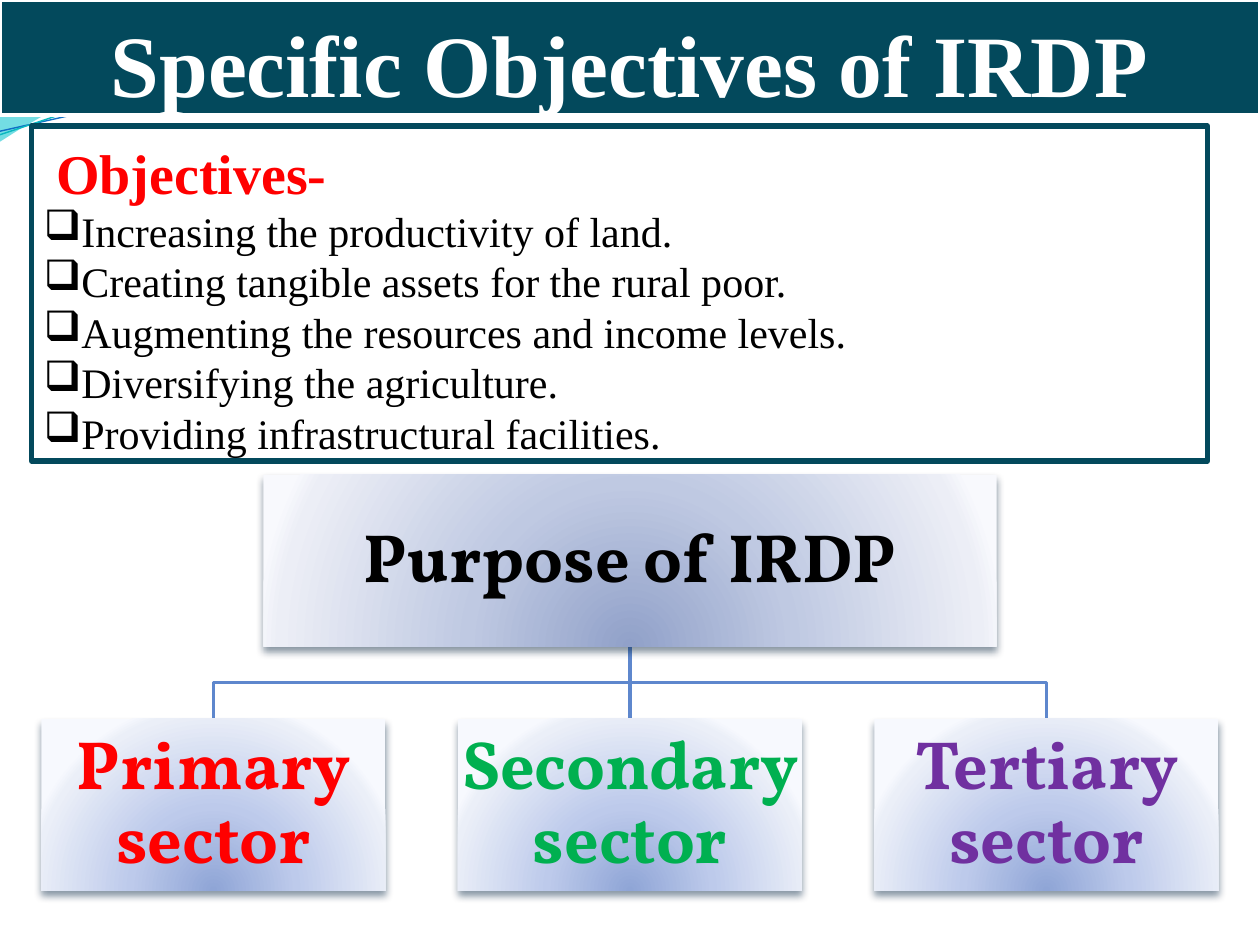
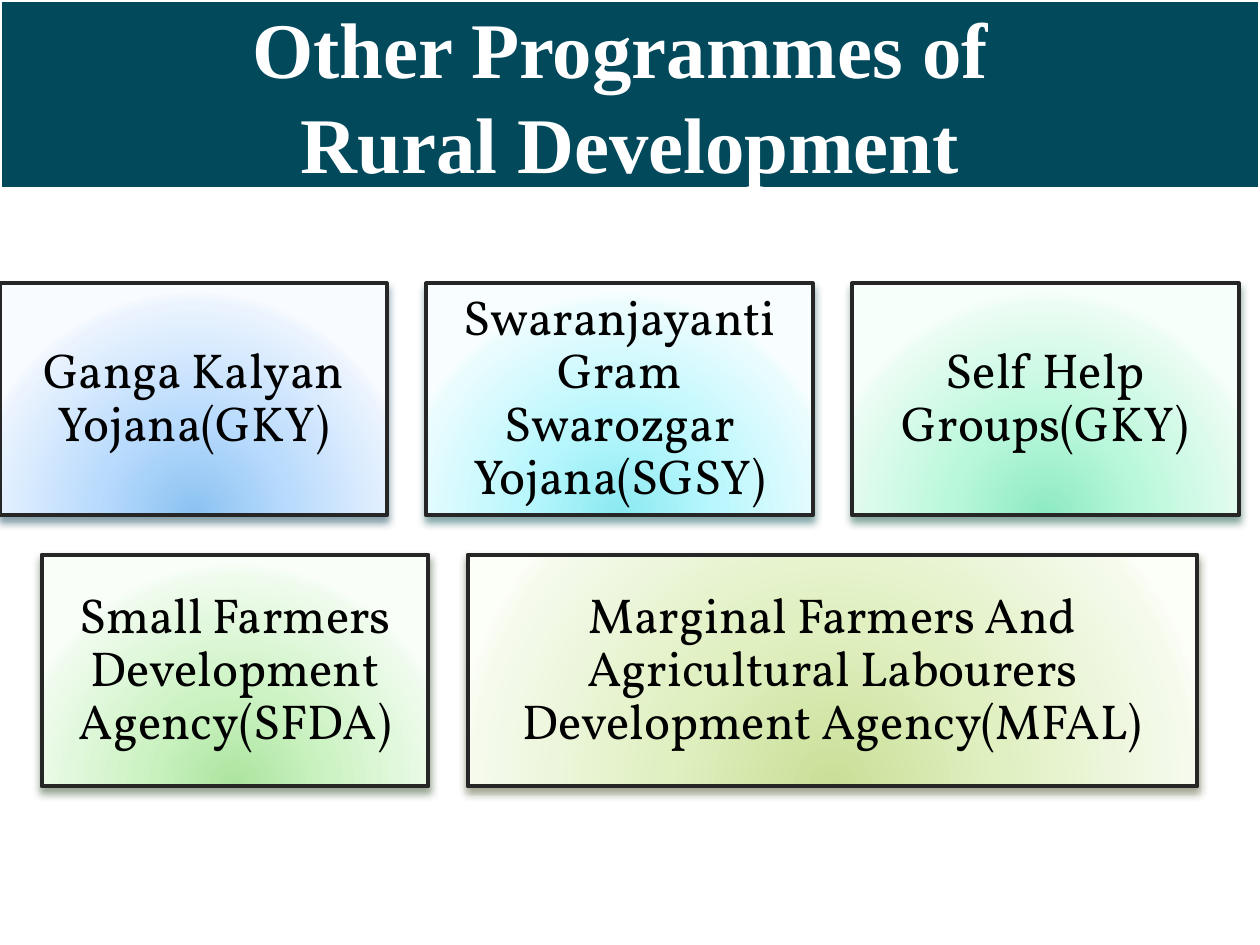
from dataclasses import dataclass

from lxml import etree
from pptx import Presentation
from pptx import util as u
from pptx.dml.color import RGBColor
from pptx.enum import shapes, text
from pptx.oxml.ns import qn

Pt = u.Pt


@dataclass(frozen=True)
class Theme:
    serif: str = "Times New Roman"
    display: str = "Vollkorn"
    band: str = "03495C"
    white: str = "FFFFFF"
    black: str = "000000"
    red: str = "FF0000"
    green: str = "00B050"
    purple: str = "7030A0"
    frame: str = "262626"
    branch: str = "5E87CD"
    wave: str = "73DDE3"
    wave_lines: tuple = ("0F6FC6", "0AB8BF")
    heading_size: int = 32
    body_size: int = 24
    node_size: int = 39
    card_size: int = 28


THEME = Theme()
STOPS = (0, 43, 93, 100)
ROOT_GLOW = ("91A1C9", "BFC9E2", "ECEEF6", "F8F9FD")
SECTOR_GLOW = ("8FA5D6", "BDCAEB", "EBEFF8", "F7F9FE")
OBJECTIVES = (
    "Increasing the productivity of land.",
    "Creating tangible assets for the rural poor.",
    "Augmenting the resources and income levels.",
    "Diversifying the agriculture.",
    "Providing infrastructural facilities.",
)
SECTORS = (
    ("Primary sector", THEME.red),
    ("Secondary sector", THEME.green),
    ("Tertiary sector", THEME.purple),
)
# Each programme: name, width, glow colours, shadow colour
PROGRAMME_ROWS = (
    (
        ("Ganga Kalyan Yojana(GKY)", 221,
         ("8BC2F1", "B9DBFD", "EAF3FE", "F8FBFF"), "00374C"),
        ("Swaranjayanti Gram Swarozgar Yojana(SGSY)", 221,
         ("8BE9F1", "B9F7FD", "EAFCFE", "F8FEFF"), "024B4E"),
        ("Self Help Groups(GKY)", 221,
         ("8DEAC2", "BAF8DB", "EAFCF3", "F7FFFB"), "044A37"),
    ),
    (
        ("Small Farmers Development Agency(SFDA)", 221,
         ("ACE49F", "CDF3C4", "EFFBED", "F9FFF8"), "2B4821"),
        ("Marginal Farmers And Agricultural Labourers Development Agency(MFAL)", 417,
         ("C9DF97", "E0F0C1", "F5FAEC", "FCFEF8"), "3A4519"),
    ),
)


def apply(target, values):
    for name, value in values.items():
        setattr(target, name, value)


def add_child(parent, tag, **attributes):
    child = etree.SubElement(parent, qn(tag))
    for name, value in attributes.items():
        child.set(name, str(value))
    return child


def style_span(span, font, size, color, bold=False):
    apply(span.font, {"name": font, "size": Pt(size), "bold": bold})
    span.font.color.rgb = RGBColor.from_string(color)


def set_line(line, color, width):
    line.color.rgb = RGBColor.from_string(color)
    line.width = Pt(width)


def add_rect(page, box, anchor, margins):
    """Add an unfilled rectangle; margins run left, top, right, bottom."""
    rect = page.shapes.add_shape(shapes.MSO_SHAPE.RECTANGLE, *map(Pt, box))
    rect.shadow.inherit = False
    rect.fill.background()
    rect.line.fill.background()
    sides = ("margin_left", "margin_top", "margin_right", "margin_bottom")
    apply(rect.text_frame, {
        "word_wrap": True, "vertical_anchor": anchor,
        **dict(zip(sides, map(Pt, margins))),
    })
    return rect


def add_glow(rect, colors, shadow):
    """Fill with a circular gradient rising from below, and drop a soft shadow."""
    properties = rect.fill._xPr
    properties.remove(properties.find(qn("a:noFill")))
    gradient = etree.Element(qn("a:gradFill"), rotWithShape="1")
    stops = add_child(gradient, "a:gsLst")
    for place, color in zip(STOPS, colors):
        add_child(add_child(stops, "a:gs", pos=place * 1000), "a:srgbClr", val=color)
    circle = add_child(gradient, "a:path", path="circle")
    add_child(circle, "a:fillToRect", l=50000, t=130000, r=50000, b=-30000)
    properties.find(qn("a:prstGeom")).addnext(gradient)

    effects = properties.find(qn("a:effectLst"))
    outer = add_child(effects, "a:outerShdw", blurRad=Pt(4.5), dist=Pt(3),
                      dir=5400000, rotWithShape=0)
    tint = add_child(outer, "a:srgbClr", val=shadow)
    add_child(tint, "a:alpha", val=48000)


def add_glow_box(page, box, label, glow, shadow, margin, size, color, bold=False):
    rect = add_rect(page, box, text.MSO_ANCHOR.MIDDLE, [margin] * 4)
    add_glow(rect, glow, shadow)
    para = rect.text_frame.paragraphs[0]
    apply(para, {"text": label, "alignment": text.PP_ALIGN.CENTER, "line_spacing": 0.9})
    style_span(para.runs[0], THEME.display, size, color, bold)
    return rect


def add_polyline(page, points, close=False):
    start, *rest = [(Pt(x), Pt(y)) for x, y in points]
    builder = page.shapes.build_freeform(*start)
    builder.add_line_segments(rest, close=close)
    outline = builder.convert_to_shape()
    outline.shadow.inherit = False
    return outline


def add_straight(page, start, end, color, width):
    line = page.shapes.add_connector(
        shapes.MSO_CONNECTOR.STRAIGHT, *map(Pt, (*start, *end)))
    set_line(line.line, color, width)
    add_child(line.line._ln.getparent(), "a:effectLst")
    return line


def add_wave_corner(page, top):
    """Add the tip of the wave that reaches out below the title band."""
    tip = add_polyline(page, [(0, top), (25, top), (11, top + 8), (0, top + 15)], True)
    tip.fill.solid()
    tip.fill.fore_color.rgb = RGBColor.from_string(THEME.wave)
    tip.line.fill.background()
    for color, drop, reach in zip(THEME.wave_lines, (9, 11), (40, 33)):
        add_straight(page, (0, top + drop), (reach, top), color, 0.8)


def add_title_band(page, box, title, size):
    band = add_rect(page, box, text.MSO_ANCHOR.BOTTOM, (0, 3.6, 0, 0))
    band.fill.solid()
    band.fill.fore_color.rgb = RGBColor.from_string(THEME.band)
    set_line(band.line, THEME.white, 2.25)
    para = band.text_frame.paragraphs[0]
    apply(para, {"text": title, "alignment": text.PP_ALIGN.CENTER})
    for span in para.runs:
        style_span(span, THEME.serif, size, THEME.white, True)


def add_objectives(page, box):
    panel = add_rect(page, box, text.MSO_ANCHOR.TOP, (7.2, 7, 7.2, 3.6))
    set_line(panel.line, THEME.band, 3)
    para = panel.text_frame.paragraphs[0]
    para.alignment = text.PP_ALIGN.JUSTIFY
    for words, size, color, bold in (
        (" ", 28, THEME.black, False),
        ("Objectives-", THEME.heading_size, THEME.red, True),
    ):
        span = para.add_run()
        span.text = words
        style_span(span, THEME.serif, size, color, bold)
    for objective in OBJECTIVES:
        para = panel.text_frame.add_paragraph()
        apply(para, {"text": objective, "alignment": text.PP_ALIGN.JUSTIFY})
        style_span(para.runs[0], THEME.serif, THEME.body_size, THEME.black)
        add_child(para._p.get_or_add_pPr(), "a:buChar", char="❑")


def add_purpose_tree(page, box):
    """Draw the root over its three sectors, joined by branches."""
    left, top, width, height = box
    node_height, root_width, sector_width = 98, 419, 196.6
    node_style = {"margin": 2.16, "size": THEME.node_size, "bold": True}
    middle = left + width / 2
    root_bottom, sector_top = top + node_height, top + height - node_height
    bend = (root_bottom + sector_top) / 2
    pitch = (width - sector_width) / 2

    for center in (middle + pitch, middle - pitch):
        branch = add_polyline(page, [(middle, root_bottom), (middle, bend),
                                     (center, bend), (center, sector_top)])
        branch.fill.background()
        set_line(branch.line, THEME.branch, 2)
    stem = add_straight(page, (middle, root_bottom), (middle, sector_top),
                        THEME.branch, 2)

    root = add_glow_box(page, (middle - root_width / 2, top, root_width, node_height),
                        "Purpose of IRDP", ROOT_GLOW, "031F39",
                        color=THEME.black, **node_style)
    sectors = [
        add_glow_box(page, (left + index * pitch, sector_top, sector_width, node_height),
                     label, SECTOR_GLOW, "032341", color=color, **node_style)
        for index, (label, color) in enumerate(SECTORS)
    ]
    stem.begin_connect(root, 2)
    stem.end_connect(sectors[1], 0)


def add_programmes(page, box):
    """Lay the programme cards out in centred rows."""
    left, top, width, height = box
    gap = 22.4
    row_height = (height - gap) / len(PROGRAMME_ROWS)
    for index, row in enumerate(PROGRAMME_ROWS):
        row_width = sum(card[1] for card in row) + gap * (len(row) - 1)
        x = left + (width - row_width) / 2
        y = top + index * (row_height + gap)
        for label, card_width, glow, shadow in row:
            card = add_glow_box(page, (x, y, card_width, row_height), label, glow,
                                shadow, 8.4, THEME.card_size, THEME.black)
            set_line(card.line, THEME.frame, 2.25)
            x += card_width + gap


def build_objectives_page(page):
    add_wave_corner(page, 66)
    add_title_band(page, (0, 0, 720, 66), "Specific Objectives of IRDP", 50)
    add_objectives(page, (18, 72, 672, 191.5))
    add_purpose_tree(page, (23.7, 271.2, 672.6, 237.5))


def build_programmes_page(page):
    add_title_band(page, (0, 0, 720, 108),
                   "Other Programmes of \vRural Development", 45)
    add_programmes(page, (0, 162, 708, 287.4))


def main():
    deck = Presentation()
    apply(deck, {"slide_width": Pt(720), "slide_height": Pt(540)})
    for build in (build_objectives_page, build_programmes_page):
        build(deck.slides.add_slide(deck.slide_layouts[6]))
    deck.save("out.pptx")


if __name__ == "__main__":
    main()
